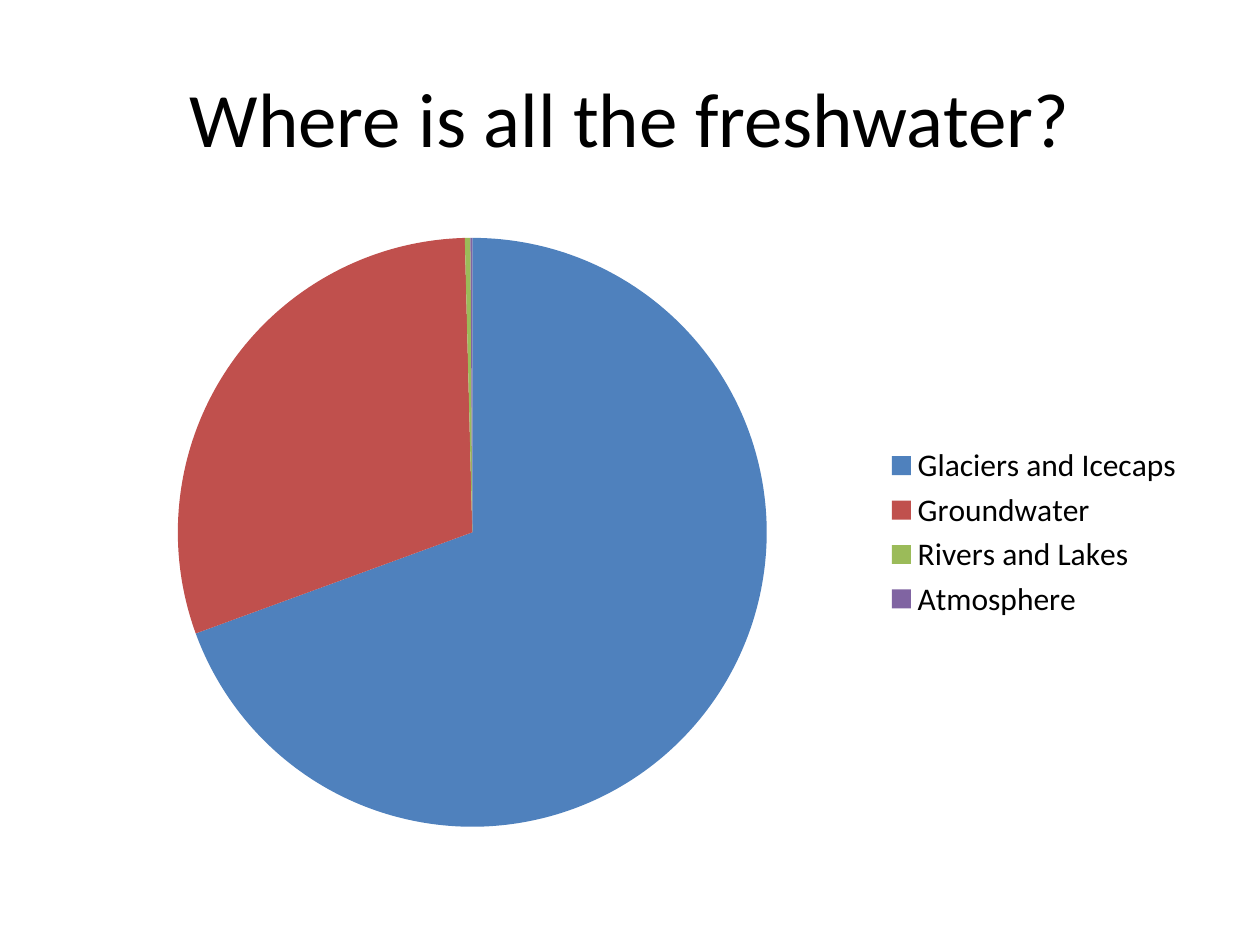
from dataclasses import dataclass

from pptx import Presentation
from pptx.chart.data import CategoryChartData
from pptx.dml.color import RGBColor
from pptx.enum.chart import XL_CHART_TYPE, XL_LEGEND_POSITION
from pptx.enum.text import MSO_ANCHOR, PP_ALIGN
from pptx.util import Inches, Pt

PIE = XL_CHART_TYPE.PIE
LEGEND_RIGHT = XL_LEGEND_POSITION.RIGHT
MIDDLE = MSO_ANCHOR.MIDDLE
CENTER = PP_ALIGN.CENTER
BLANK_LAYOUT = 6

FRESHWATER_SHARES = {
    "Glaciers and Icecaps": 69,
    "Groundwater": 30,
    "Rivers and Lakes": 0.3,
    "Atmosphere": 0.1,
}


@dataclass(frozen=True)
class Theme:
    font: str = "Calibri"
    text_color: str = "000000"
    title_size: int = 44
    legend_size: int = 18
    slice_colors: tuple = ("4F81BD", "C0504D", "9BBB59", "8064A2")


def format_font(font, name, size, color):
    font.name = name
    font.size = Pt(size)
    font.color.rgb = RGBColor.from_string(color)


def write_text(text_frame, text, *, align, anchor, **font_format):
    text_frame.word_wrap = True
    text_frame.vertical_anchor = anchor
    paragraph = text_frame.paragraphs[0]
    paragraph.alignment = align
    run = paragraph.add_run()
    run.text = text
    format_font(run.font, **font_format)


class SlideBuilder:
    """Add styled elements to one slide."""

    def __init__(self, slide, theme):
        self.slide = slide
        self.theme = theme

    def title(self, text, left, top, width, height):
        shape = self.slide.shapes.add_textbox(left, top, width, height)
        write_text(shape.text_frame, text, align=CENTER, anchor=MIDDLE,
                   name=self.theme.font, size=self.theme.title_size,
                   color=self.theme.text_color)

    def pie_chart(self, shares, left, top, width, height):
        chart_data = CategoryChartData()
        chart_data.categories = list(shares)
        chart_data.add_series("Series 1", list(shares.values()))
        chart = self.slide.shapes.add_chart(
            PIE, left, top, width, height, chart_data).chart
        chart.has_title = False
        format_font(chart.font, self.theme.font, self.theme.legend_size,
                    self.theme.text_color)
        chart.has_legend = True
        chart.legend.position = LEGEND_RIGHT
        chart.legend.include_in_layout = False
        plot = chart.plots[0]
        plot.vary_by_categories = True
        for index, color in enumerate(self.theme.slice_colors):
            fill = plot.series[0].points[index].format.fill
            fill.solid()
            fill.fore_color.rgb = RGBColor.from_string(color)


def main():
    presentation = Presentation()
    presentation.slide_width = Inches(10)
    presentation.slide_height = Inches(7.5)
    slide = presentation.slides.add_slide(
        presentation.slide_layouts[BLANK_LAYOUT])
    builder = SlideBuilder(slide, Theme())
    builder.title("Where is all the freshwater?",
                  Inches(0.5), Inches(0.3), Inches(9), Inches(1.25))
    builder.pie_chart(FRESHWATER_SHARES,
                      Inches(0.5), Inches(1.75), Inches(9), Inches(4.95))
    presentation.save("out.pptx")


if __name__ == "__main__":
    main()
